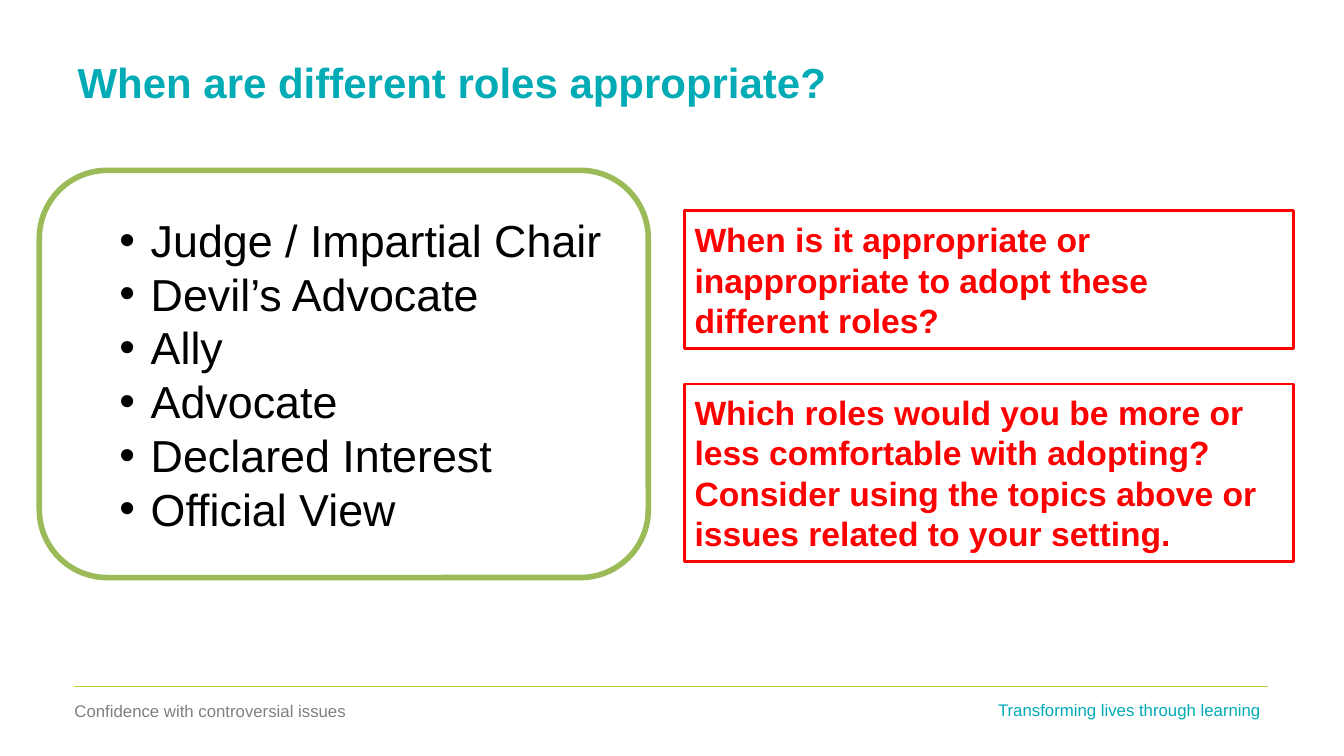
from lxml.etree import SubElement
from pptx import Presentation
from pptx.dml.color import RGBColor
from pptx.enum.shapes import MSO_CONNECTOR, MSO_SHAPE
from pptx.enum.text import MSO_ANCHOR, MSO_AUTO_SIZE, PP_ALIGN
from pptx.oxml.ns import qn
from pptx.util import Inches, Pt

TEAL, RED, GREEN, LIME = "00ABB5", "FF0000", "9BBB59", "B3D236"
ROLES = ["Judge / Impartial Chair", "Devil’s Advocate", "Ally", "Advocate",
         "Declared Interest", "Official View"]
QUESTIONS = [
    (2.09, 1.37, "When is it appropriate or inappropriate to adopt these different roles?"),
    (3.81, 1.76, "Which roles would you be more or less comfortable with adopting? "
                 "Consider using the topics above or issues related to your setting."),
]
FOOTERS = [
    (0.64, 6.9, "Confidence with controversial issues", "808080"),
    (9.8, 6.89, "Transforming lives through learning", TEAL),
]


def rgb(color):
    """Turn a hex string into a colour."""
    return RGBColor.from_string(color)


def write(tf, lines, size, color, bold=False):
    """Fill a text frame with left-aligned paragraphs in one style."""
    tf.word_wrap = True
    tf.text = "\n".join(lines)
    for p in tf.paragraphs:
        p.alignment = PP_ALIGN.LEFT
        for r in p.runs:
            r.font.name = "Arial"
            r.font.size = Pt(size)
            r.font.bold = bold
            r.font.color.rgb = rgb(color)


def add_bullet(p, margin, indent):
    """Give a paragraph a hanging round bullet."""
    pPr = p._p.get_or_add_pPr()
    pPr.set("marL", str(Inches(margin)))
    pPr.set("indent", str(Inches(indent)))
    SubElement(pPr, qn("a:buFont"), typeface="Arial")
    SubElement(pPr, qn("a:buChar"), char="•")


def add_panel(slide, kind, box, line_color, line_width):
    """Add a white outlined panel and return its text frame."""
    sp = slide.shapes.add_shape(kind, *map(Inches, box))
    sp.shadow.inherit = False
    sp.fill.solid()
    sp.fill.fore_color.rgb = rgb("FFFFFF")
    sp.line.color.rgb = rgb(line_color)
    sp.line.width = Pt(line_width)
    sp.text_frame.vertical_anchor = MSO_ANCHOR.MIDDLE
    return sp.text_frame


def add_title(slide, text):
    """Place and format the title placeholder."""
    sp = slide.shapes.title
    sp.left, sp.top, sp.width, sp.height = map(Inches, (0.67, 0.42, 11.85, 0.78))
    tf = sp.text_frame
    tf.auto_size = MSO_AUTO_SIZE.NONE
    tf.vertical_anchor = MSO_ANCHOR.MIDDLE
    write(tf, [text], 30, TEAL, bold=True)


def add_footer(slide):
    """Add the footer rule and its two captions."""
    rule = slide.shapes.add_connector(
        MSO_CONNECTOR.STRAIGHT, *map(Inches, (0.73, 6.81, 12.58, 6.81)))
    rule.line.color.rgb = rgb(LIME)
    rule.line.width = Pt(1)
    SubElement(rule._element.spPr, qn("a:effectLst"))
    for left, top, text, color in FOOTERS:
        sp = slide.shapes.add_textbox(*map(Inches, (left, top, 3.01, 0.3)))
        write(sp.text_frame, [text], 12, color)


def main():
    """Build and save the slide."""
    prs = Presentation()
    prs.slide_width, prs.slide_height = Inches(13.33), Inches(7.5)
    slide = prs.slides.add_slide(prs.slide_layouts[5])
    add_footer(slide)
    add_title(slide, "When are different roles appropriate?")
    for top, height, question in QUESTIONS:
        tf = add_panel(slide, MSO_SHAPE.RECTANGLE, (6.79, top, 6.04, height), RED, 2)
        write(tf, [question], 24, RED, bold=True)
    tf = add_panel(slide, MSO_SHAPE.ROUNDED_RECTANGLE, (0.39, 1.69, 6.04, 4.04), GREEN, 4)
    write(tf, ROLES, 32, "000000")
    for p in tf.paragraphs:
        p.level = 1
        add_bullet(p, 0.81, -0.31)
    prs.save("out.pptx")


if __name__ == "__main__":
    main()
